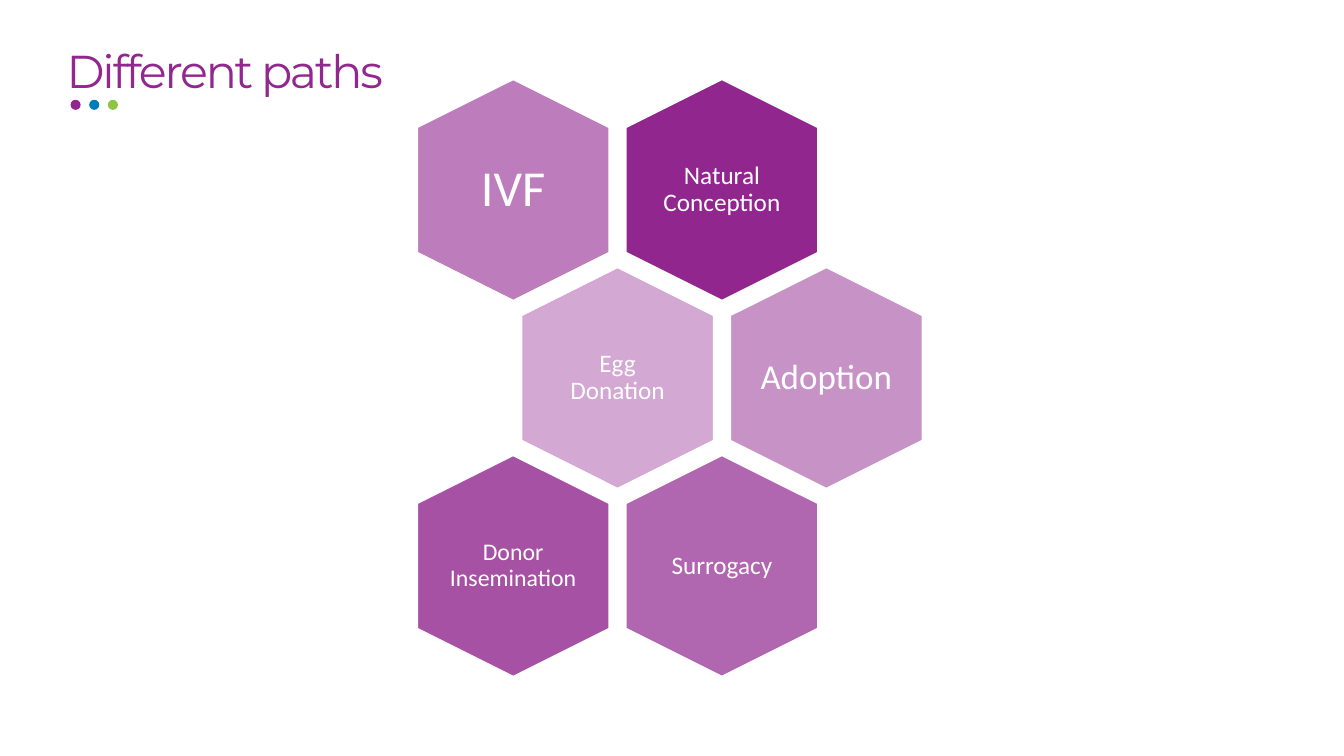
from lxml.etree import SubElement
from pptx import Presentation
from pptx.dml.color import RGBColor
from pptx.enum.shapes import MSO_SHAPE
from pptx.enum.text import MSO_ANCHOR, MSO_AUTO_SIZE, PP_ALIGN
from pptx.oxml.ns import qn
from pptx.util import Inches, Pt

PURPLE = RGBColor(0x91, 0x27, 0x8F)
HEXAGON_PURPLE = RGBColor(0x91, 0x26, 0x8F)
BLUE = RGBColor(0x00, 0x7D, 0xB8)
GREEN = RGBColor(0x8C, 0xC6, 0x3F)
WHITE = RGBColor(0xFF, 0xFF, 0xFF)


def write(box, text, *, size, font, color, align, anchor, spacing, inset_x, inset_y):
    frame = box.text_frame
    frame.word_wrap = True
    frame.auto_size = MSO_AUTO_SIZE.NONE
    frame.vertical_anchor = anchor
    frame.margin_left = frame.margin_right = Inches(inset_x)
    frame.margin_top = frame.margin_bottom = Inches(inset_y)
    para = frame.paragraphs[0]
    para.alignment = align
    para.line_spacing = spacing
    span = para.add_run()
    span.text = text
    span.font.size = Pt(size)
    span.font.name = font
    span.font.color.rgb = color
    return span


deck = Presentation()
deck.slide_width = Inches(13.33)
deck.slide_height = Inches(7.5)
page = deck.slides.add_slide(deck.slide_layouts[5])

# Three dots under the title
for index, color in enumerate((PURPLE, BLUE, GREEN)):
    dot = page.shapes.add_shape(
        MSO_SHAPE.OVAL, Inches(0.7 + index * 0.185), Inches(0.99), Inches(0.1), Inches(0.1))
    dot.shadow.inherit = False
    dot.fill.solid()
    dot.fill.fore_color.rgb = color
    dot.line.fill.background()

# Title
title = page.shapes.title
title.left, title.top = Inches(0.56), Inches(0.48)
title.width, title.height = Inches(12.13), Inches(0.58)
span = write(title, "Different paths", size=32.9, font="Montserrat", color=PURPLE,
             align=PP_ALIGN.LEFT, anchor=MSO_ANCHOR.TOP, spacing=0.8,
             inset_x=0.1, inset_y=0.05)
span.font._element.set("spc", "-160")

# Honeycomb: label, row, column, opacity in percent, text size, inset
paths = [
    ("Natural Conception", 0, 1, 100, 18, 0.07),
    ("IVF", 0, 0, 60, 36, 0),
    ("Egg Donation", 1, 0, 40, 18, 0.07),
    ("Adoption", 1, 1, 50, 25, 0),
    ("Surrogacy", 2, 1, 70, 18, 0.07),
    ("Donor Insemination", 2, 0, 80, 17, 0),
]
COLUMN_STEP = 2.07
ROW_STEP = 3.73 / 2

for label, row, column, opacity, size, inset in paths:
    # Odd rows shift by half a column
    left = 3.99 + (column + row % 2 / 2) * COLUMN_STEP
    top = 0.93 + row * ROW_STEP

    hexagon = page.shapes.add_shape(
        MSO_SHAPE.HEXAGON, Inches(left), Inches(top), Inches(2.2), Inches(1.91))
    hexagon.rotation = 90
    hexagon.adjustments[0] = 0.25
    hexagon.shadow.inherit = False
    hexagon.fill.solid()
    hexagon.fill.fore_color.rgb = HEXAGON_PURPLE
    hexagon.line.color.rgb = WHITE
    hexagon.line.width = Pt(1.5)
    if opacity < 100:
        fill_color = hexagon._element.spPr.find(qn("a:solidFill")).find(qn("a:srgbClr"))
        SubElement(fill_color, qn("a:alpha"), val=str(opacity * 1000))

    # Upright label centred on the turned hexagon
    box = page.shapes.add_textbox(
        Inches(left + 0.44), Inches(top + 0.2), Inches(1.32), Inches(1.51))
    write(box, label, size=size, font="Calibri", color=WHITE,
          align=PP_ALIGN.CENTER, anchor=MSO_ANCHOR.MIDDLE, spacing=0.9,
          inset_x=inset, inset_y=inset)

deck.save("out.pptx")
